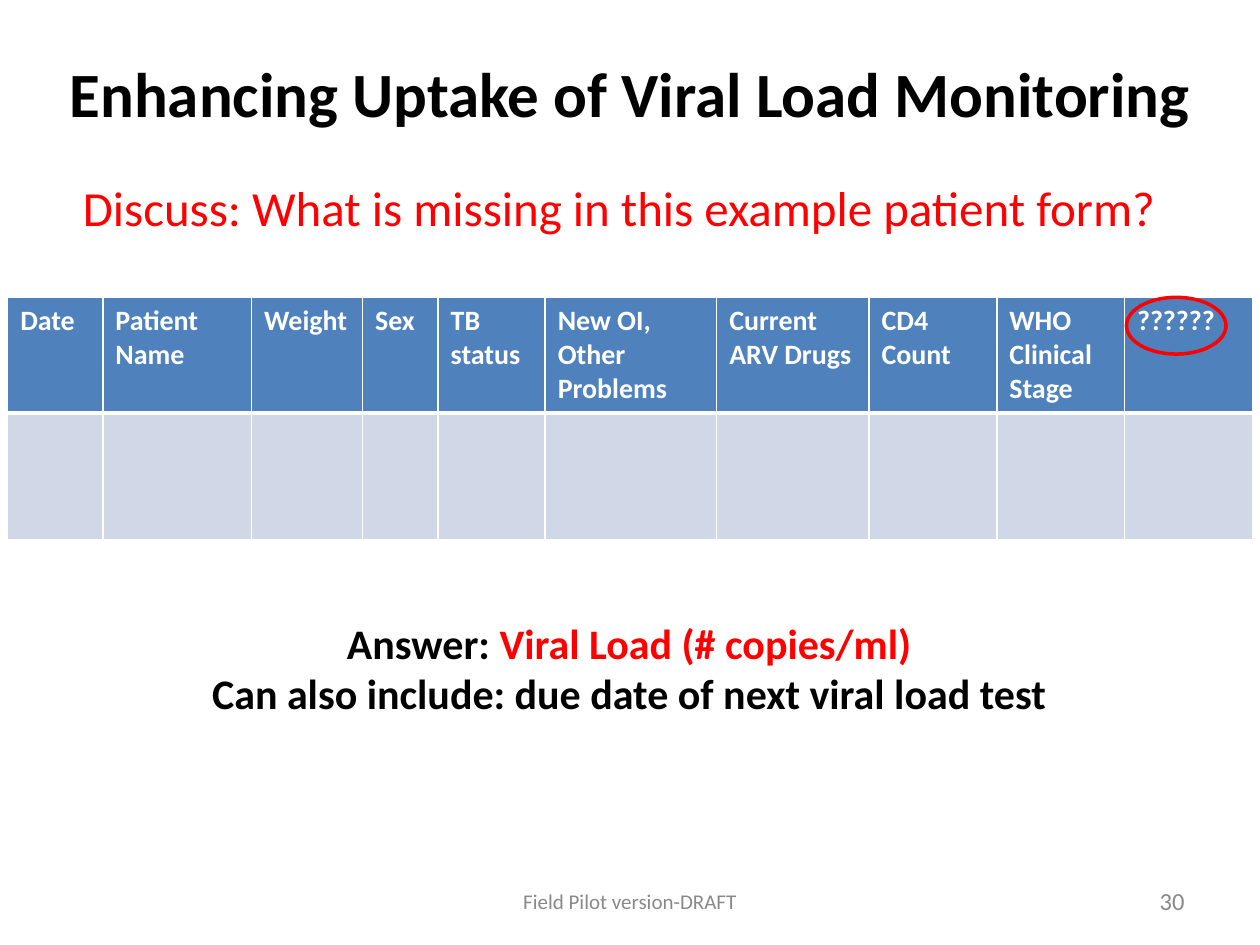
from dataclasses import dataclass

from lxml import etree
from pptx import Presentation
from pptx.dml.color import RGBColor
from pptx.enum import shapes, text
from pptx.oxml import ns
from pptx.util import Pt

FONT = "Calibri"
HEX = {"black": "000000", "white": "FFFFFF", "red": "FF0000",
       "grey": "898989", "blue": "4F81BD", "pale": "D0D8E8"}
LEFT, MID, RIGHT = text.PP_ALIGN.LEFT, text.PP_ALIGN.CENTER, text.PP_ALIGN.RIGHT
TOP, CENTER = text.MSO_ANCHOR.TOP, text.MSO_ANCHOR.MIDDLE


@dataclass
class Label:
    box: tuple[float, float, float, float]
    lines: list[list[tuple[str, str]]]
    size: float
    bold: bool = False
    align: text.PP_ALIGN = MID
    anchor: text.MSO_ANCHOR = CENTER


@dataclass
class Column:
    head: str
    width: float


LABELS = [
    Label((9.4, 7.9, 701.3, 90), [[("Enhancing Uptake of Viral Load Monitoring", "black")]],
          36, bold=True),
    Label((40.3, 97.9, 639.4, 41),
          [[("Discuss: What is missing in this example patient form?", "red")]],
          28, align=LEFT, anchor=TOP),
    Label((97.9, 349.2, 523.4, 65.5),
          [[("Answer: ", "black"), ("Viral Load (# copies/ml)", "red")],
           [("Can also include: due date of next viral load test", "black")]],
          24, bold=True, anchor=TOP),
    Label((246, 500.4, 228, 28.8), [[("Field Pilot version-DRAFT", "grey")]], 12),
    Label((516, 500.4, 168, 28.8), [[("30", "grey")]], 14, align=RIGHT),
]

COLUMNS = [
    Column("Date", 54.4), Column("Patient Name", 85), Column("Weight", 63.4),
    Column("Sex", 43.2), Column("TB status", 61.2), Column("New OI, Other Problems", 98),
    Column("Current ARV Drugs", 87.1), Column("CD4 Count", 73),
    Column("WHO Clinical Stage", 73), Column("??????", 73),
]
ROWS = (64.4, 72.4)


def rgb(name: str) -> RGBColor:
    return RGBColor.from_string(HEX[name])


def style(run, size: float, color: str, bold: bool) -> None:
    run.font.name = FONT
    run.font.size = Pt(size)
    run.font.bold = bold
    run.font.color.rgb = rgb(color)


def add_label(slide, label: Label) -> None:
    frame = slide.shapes.add_textbox(*map(Pt, label.box)).text_frame
    frame.word_wrap = True
    frame.vertical_anchor = label.anchor
    for i, line in enumerate(label.lines):
        para = frame.add_paragraph() if i else frame.paragraphs[0]
        para.alignment = label.align
        for words, color in line:
            run = para.add_run()
            run.text = words
            style(run, label.size, color, label.bold)


def add_edges(cell, top: float, low: float) -> None:
    """Draw white cell borders, with the top and bottom widths in points."""
    props = cell._tc.get_or_add_tcPr()
    edges = {"lnL": 1, "lnR": 1, "lnT": top, "lnB": low}
    for i, (tag, width) in enumerate(edges.items()):
        line = etree.Element(ns.qn(f"a:{tag}"), w=str(Pt(width)))
        fill = etree.SubElement(line, ns.qn("a:solidFill"))
        etree.SubElement(fill, ns.qn("a:srgbClr"), val=HEX["white"])
        props.insert(i, line)


def add_form(slide, left: float, top: float) -> None:
    wide = sum(col.width for col in COLUMNS)
    table = slide.shapes.add_table(len(ROWS), len(COLUMNS), Pt(left), Pt(top),
                                   Pt(wide), Pt(sum(ROWS))).table
    for row, high in zip(table.rows, ROWS):
        row.height = Pt(high)
    for i, col in enumerate(COLUMNS):
        table.columns[i].width = Pt(col.width)
        head, body = table.cell(0, i), table.cell(1, i)
        for cell, color, edges in ((head, "blue", (1, 3)), (body, "pale", (3, 1))):
            cell.fill.solid()
            cell.fill.fore_color.rgb = rgb(color)
            add_edges(cell, *edges)
        head.text_frame.text = col.head
        style(head.text_frame.paragraphs[0].runs[0], 16, "white", True)


def add_ring(slide, box: tuple[float, float, float, float]) -> None:
    ring = slide.shapes.add_shape(shapes.MSO_SHAPE.OVAL, *map(Pt, box))
    ring.shadow.inherit = False
    ring.fill.background()
    ring.line.color.rgb = rgb("red")
    ring.line.width = Pt(2)


def main() -> None:
    deck = Presentation()
    deck.slide_width, deck.slide_height = Pt(720), Pt(540)
    slide = deck.slides.add_slide(deck.slide_layouts[6])
    add_form(slide, 4.4, 170)
    add_ring(slide, (643.7, 169.9, 56.9, 32.4))
    for label in LABELS:
        add_label(slide, label)
    deck.save("out.pptx")


if __name__ == "__main__":
    main()
